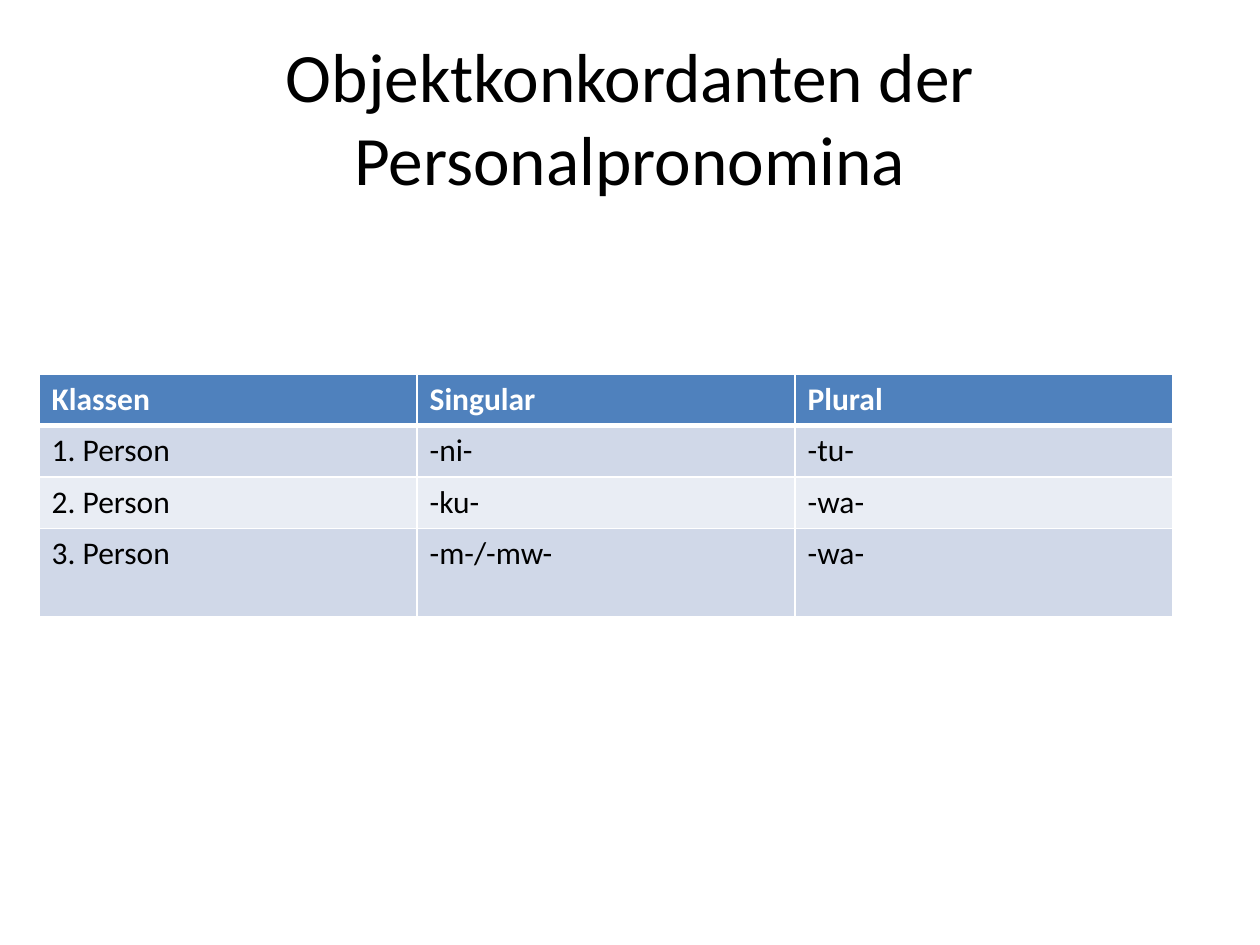
from lxml.etree import SubElement
from pptx import Presentation
from pptx.dml.color import RGBColor
from pptx.enum.text import MSO_ANCHOR, MSO_AUTO_SIZE, PP_ALIGN
from pptx.oxml.ns import qn
from pptx.util import Inches, Pt

BLACK = RGBColor(0x00, 0x00, 0x00)
WHITE = RGBColor(0xFF, 0xFF, 0xFF)
HEADER = RGBColor(0x4F, 0x81, 0xBD)
BANDS = [RGBColor(0xE9, 0xED, 0xF4), RGBColor(0xD0, 0xD8, 0xE8)]

TITLE_FONT = {"name": "Calibri", "size": Pt(39.6), "bold": False}
HEADER_FONT = {"name": "Calibri", "size": Pt(18), "bold": True}
BODY_FONT = {**HEADER_FONT, "bold": False}

COL_WIDTH = 3
ROW_HEIGHTS = [0.4, 0.41, 0.41, 0.7]
ROWS = [
    ["Klassen", "Singular", "Plural"],
    ["1. Person", "-ni-", "-tu-"],
    ["2. Person", "-ku-", "-wa-"],
    ["3. Person", "-m-/-mw-", "-wa-"],
]


def set_attrs(obj, values):
    for name, value in values.items():
        setattr(obj, name, value)


def write(tf, text, font, color):
    p = tf.paragraphs[0]
    r = p.add_run()
    r.text = text
    set_attrs(r.font, font)
    r.font.color.rgb = color
    return p


def set_borders(cell, widths):
    tcPr = cell._tc.get_or_add_tcPr()
    for i, (side, width) in enumerate(widths.items()):
        ln = SubElement(tcPr, qn(f"a:ln{side}"), w=str(Pt(width)))
        fill = SubElement(ln, qn("a:solidFill"))
        SubElement(fill, qn("a:srgbClr"), val=str(WHITE))
        tcPr.insert(i, ln)


def add_title(s, text):
    sp = s.shapes.title
    set_attrs(sp, {"left": Inches(0.5), "top": Inches(0.3),
                   "width": Inches(9), "height": Inches(1.25)})
    tf = sp.text_frame
    set_attrs(tf, {"word_wrap": True, "auto_size": MSO_AUTO_SIZE.NONE,
                   "vertical_anchor": MSO_ANCHOR.MIDDLE})
    write(tf, text, TITLE_FONT, BLACK).alignment = PP_ALIGN.CENTER


def add_grid(s, left, top, rows):
    cols = len(rows[0])
    table = s.shapes.add_table(
        len(rows), cols, Inches(left), Inches(top),
        Inches(cols * COL_WIDTH), Inches(sum(ROW_HEIGHTS))).table
    for col in table.columns:
        col.width = Inches(COL_WIDTH)
    for i, (row, height) in enumerate(zip(rows, ROW_HEIGHTS)):
        table.rows[i].height = Inches(height)
        for j, text in enumerate(row):
            cell = table.cell(i, j)
            cell.fill.solid()
            cell.fill.fore_color.rgb = BANDS[i % 2] if i else HEADER
            set_borders(cell, {"L": 1, "R": 1, "T": 3 if i == 1 else 1,
                               "B": 1 if i else 3})
            write(cell.text_frame, text, BODY_FONT if i else HEADER_FONT,
                  BLACK if i else WHITE)


def main():
    prs = Presentation()
    set_attrs(prs, {"slide_width": Inches(10), "slide_height": Inches(7.5)})
    s = prs.slides.add_slide(prs.slide_layouts[5])
    add_title(s, "Objektkonkordanten der Personalpronomina")
    add_grid(s, 0.31, 2.97, ROWS)
    prs.save("out.pptx")


if __name__ == "__main__":
    main()
